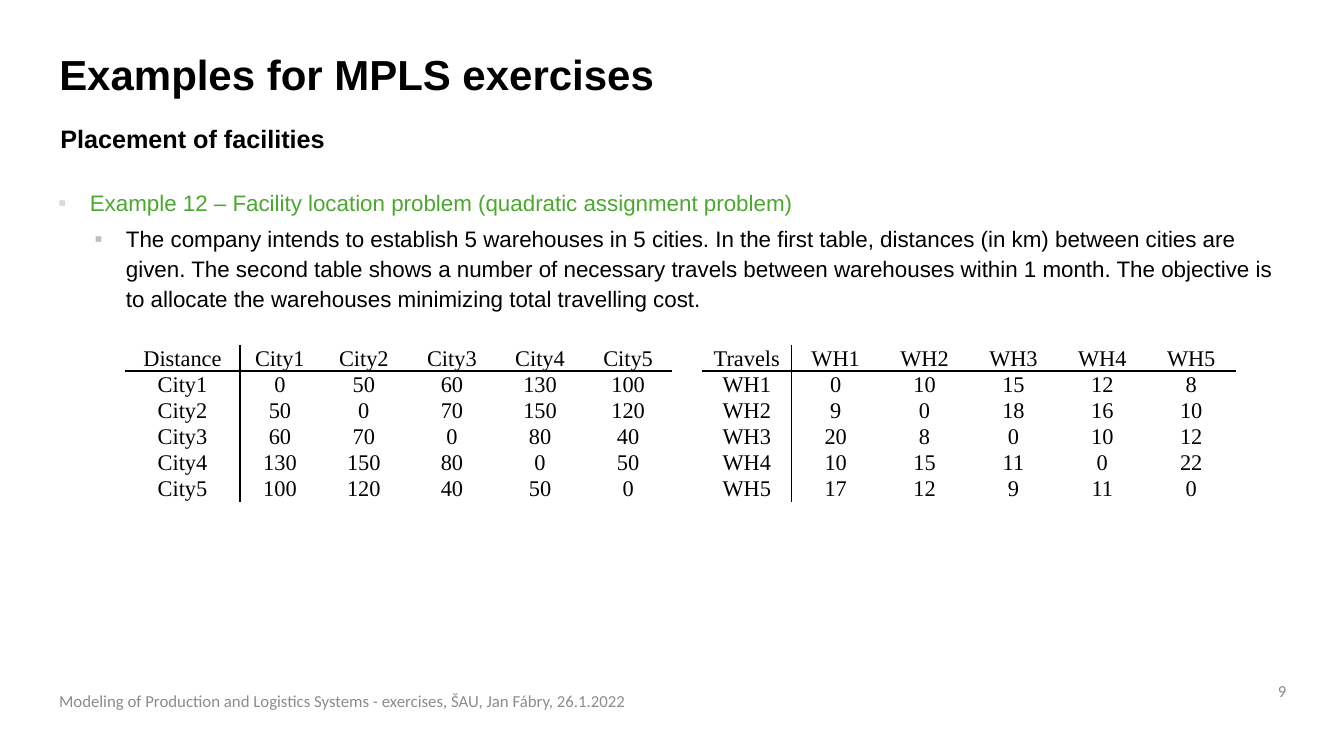
from lxml import etree
from pptx import Presentation
from pptx import util as u
from pptx.dml.color import RGBColor
from pptx.enum import text
from pptx.oxml.ns import qn

COLOURS = {"ink": "000000", "green": "4BA82E", "grey": "8C8C8C",
           "bullet": "D9D9D9", "sub_bullet": "BFBFBF"}

DISTANCES = [
    ["Distance", "City1", "City2", "City3", "City4", "City5"],
    ["City1", 0, 50, 60, 130, 100],
    ["City2", 50, 0, 70, 150, 120],
    ["City3", 60, 70, 0, 80, 40],
    ["City4", 130, 150, 80, 0, 50],
    ["City5", 100, 120, 40, 50, 0],
]
TRAVELS = [
    ["Travels", "WH1", "WH2", "WH3", "WH4", "WH5"],
    ["WH1", 0, 10, 15, 12, 8],
    ["WH2", 9, 0, 18, 16, 10],
    ["WH3", 20, 8, 0, 10, 12],
    ["WH4", 10, 15, 11, 0, 22],
    ["WH5", 17, 12, 9, 11, 0],
]
EXAMPLE = "Example 12 – Facility location problem (quadratic assignment problem)"
TASK = ("The company intends to establish 5 warehouses in 5 cities. In the first table, "
        "distances (in km) between cities are given. The second table shows a number of "
        "necessary travels between warehouses within 1 month. The objective is to allocate "
        "the warehouses minimizing total travelling cost.")
FOOTER = "Modeling of Production and Logistics Systems - exercises, ŠAU, Jan Fábry, 26.1.2022"


class ExerciseSlide:
    heading_font, footer_font, table_font = "Arial", "Calibri", "Times New Roman"

    def __init__(self, deck):
        self.slide = deck.slides.add_slide(deck.slide_layouts[1])

    def format(self, paragraph, font, size, colour, bold=False, align=text.PP_ALIGN.LEFT):
        paragraph.alignment = align
        for run in paragraph.runs:
            run.font.name = font
            run.font.size = u.Pt(size)
            run.font.bold = bold
            run.font.color.rgb = RGBColor.from_string(COLOURS[colour])

    def place(self, shape, box, anchor=text.MSO_ANCHOR.TOP, wrap=True):
        shape.left, shape.top, shape.width, shape.height = map(u.Cm, box)
        frame = shape.text_frame
        frame.auto_size = text.MSO_AUTO_SIZE.NONE
        frame.vertical_anchor = anchor
        frame.word_wrap = wrap
        return frame

    def title(self, wording, box):
        frame = self.place(self.slide.shapes.title, box)
        frame.text = wording
        frame.paragraphs[0].line_spacing = 0.9
        self.format(frame.paragraphs[0], self.heading_font, 30, "ink", True)

    def label(self, wording, box, font, size, colour, **style):
        wrap = style.pop("wrap", True)
        frame = self.place(self.slide.shapes.add_textbox(0, 0, 0, 0), box,
                           text.MSO_ANCHOR.MIDDLE, wrap)
        frame.text = wording
        self.format(frame.paragraphs[0], font, size, colour, **style)

    def bullets(self, items, box):
        frame = self.place(self.slide.placeholders[1], box)
        frame.text = "\n".join(wording for wording, *_ in items)
        for level, (paragraph, item) in enumerate(zip(frame.paragraphs, items)):
            _, colour, bullet, margin = item
            paragraph.level = level
            props = paragraph._p.get_or_add_pPr()
            props.set("marL", str(u.Cm(margin)))
            props.set("indent", str(u.Cm(-0.79)))
            tint = etree.SubElement(props, qn("a:buClr"))
            etree.SubElement(tint, qn("a:srgbClr"), val=COLOURS[bullet])
            etree.SubElement(props, qn("a:buChar"), char="▪")
            paragraph.line_spacing = 1.1
            paragraph.space_before = u.Pt(5 * level)
            self.format(paragraph, self.heading_font, 16, colour)

    def borders(self, cell, ruled):
        props = cell._tc.get_or_add_tcPr()
        for side in "LRTB":
            line = etree.SubElement(props, qn(f"a:ln{side}"), w=str(u.Pt(1)))
            if side in ruled:
                fill = etree.SubElement(line, qn("a:solidFill"))
                etree.SubElement(fill, qn("a:srgbClr"), val=COLOURS["ink"])
            else:
                etree.SubElement(line, qn("a:noFill"))

    def matrix(self, rows, left, top, widths):
        row_height = u.Cm(0.51)
        table = self.slide.shapes.add_table(
            len(rows), len(widths), u.Cm(left), u.Cm(top),
            u.Cm(sum(widths)), row_height * len(rows)).table
        table.first_row = table.horz_banding = False
        for column, width in zip(table.columns, widths):
            column.width = u.Cm(width)
        for r, values in enumerate(rows):
            table.rows[r].height = row_height
            for c, value in enumerate(values):
                cell = table.cell(r, c)
                cell.text = str(value)
                cell.margin_left = cell.margin_right = cell.margin_top = u.Cm(0.03)
                cell.margin_bottom = 0
                cell.vertical_anchor = text.MSO_ANCHOR.MIDDLE
                self.borders(cell, {0: "R", 1: "L"}.get(c, "") + {0: "B", 1: "T"}.get(r, ""))
                cell.fill.background()
                self.format(cell.text_frame.paragraphs[0], self.table_font, 16, "ink",
                            align=text.PP_ALIGN.CENTER)


def main():
    deck = Presentation()
    deck.slide_width, deck.slide_height = u.Cm(33.87), u.Cm(19.05)
    page = ExerciseSlide(deck)
    page.title("Examples for MPLS exercises", (1.24, 1.24, 25.73, 1.45))
    page.label("Placement of facilities", (1.27, 2.97, 25.68, 1.02),
               page.heading_font, 18, "ink", bold=True)
    page.bullets([(EXAMPLE, "green", "bullet", 0.79),
                  (TASK, "ink", "sub_bullet", 1.7)], (1.22, 4.57, 31.45, 12.42))
    page.matrix(DISTANCES, 3.15, 8.69, [2.9, 2.01] + [2.22] * 4)
    page.matrix(TRAVELS, 17.7, 8.69, [2.24] * 6)
    page.label(FOOTER, (1.24, 17.15, 18.21, 1.02), page.footer_font, 12, "grey")
    page.label("9", (31.78, 16.99, 0.89, 0.84), page.footer_font, 12, "grey",
               align=text.PP_ALIGN.RIGHT, wrap=False)
    deck.save("out.pptx")


if __name__ == "__main__":
    main()
